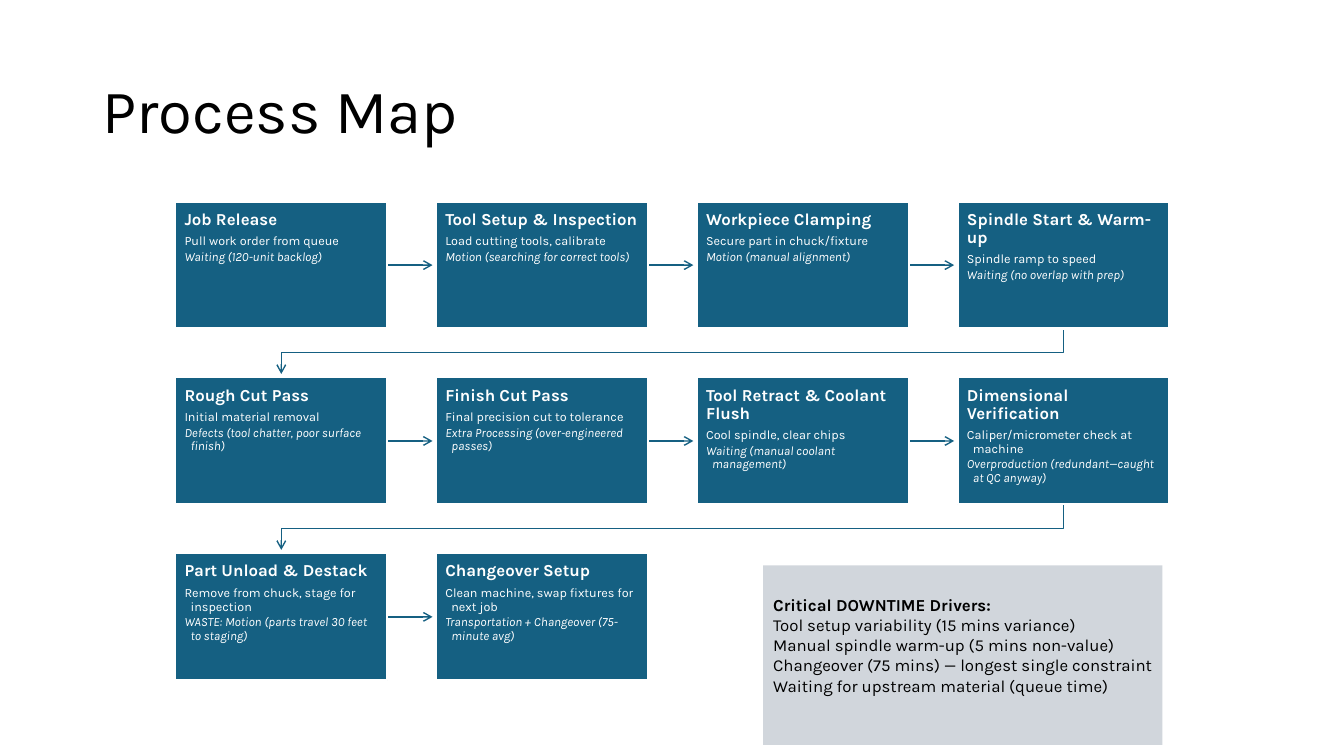
import pptx
import pptx.util
import pptx.dml.color
import pptx.enum.shapes
import pptx.enum.text
import pptx.oxml
import pptx.oxml.ns
from pptx.util import Inches

COLORS = {"blue": "156082", "white": "FFFFFF", "black": "000000", "grey": "D1D6DC"}
RGB = {name: pptx.dml.color.RGBColor.from_string(code) for name, code in COLORS.items()}
FONT = "Karla"


def add_text(frame, text, size=12, color="white", bold=False, italic=False,
             spacing=0.9, after=0, hanging=0):
    """Add one formatted paragraph, filling the empty first one if there is one."""
    paragraph = frame.paragraphs[0]
    if paragraph.runs:
        paragraph = frame.add_paragraph()
    paragraph.alignment = pptx.enum.text.PP_ALIGN.LEFT
    paragraph.line_spacing = spacing
    paragraph.space_after = pptx.util.Pt(after)
    if hanging:
        properties = paragraph._p.get_or_add_pPr()
        properties.set("marL", str(Inches(hanging)))
        properties.set("indent", str(-Inches(hanging)))
    run = paragraph.add_run()
    run.text = text
    run.font.name = FONT
    run.font.size = pptx.util.Pt(size)
    run.font.bold = bold
    run.font.italic = italic
    run.font.color.rgb = RGB[color]


def style_arrow(arrow):
    """Give a route its line, an open arrowhead at its end and no shadow."""
    arrow.line.color.rgb = RGB["blue"]
    arrow.line.width = pptx.util.Pt(1)
    head = pptx.oxml.parse_xml(
        f'<a:tailEnd {pptx.oxml.ns.nsdecls("a")} type="arrow"/>')
    arrow.line._get_or_add_ln().append(head)
    arrow._element.spPr.append(
        pptx.oxml.parse_xml(f'<a:effectLst {pptx.oxml.ns.nsdecls("a")}/>'))


presentation = pptx.Presentation()
presentation.slide_width = Inches(13.33)
presentation.slide_height = Inches(7.5)
slide = presentation.slides.add_slide(presentation.slide_layouts[6])
shapes = slide.shapes
RECTANGLE = pptx.enum.shapes.MSO_SHAPE.RECTANGLE
MIDDLE = pptx.enum.text.MSO_ANCHOR.MIDDLE

# Title
title = shapes.add_textbox(Inches(0.92), Inches(0.4), Inches(11.5), Inches(1.45)).text_frame
title.word_wrap = True
title.vertical_anchor = MIDDLE
add_text(title, "Process Map", size=44, color="black")

# Process steps: name, activity, waste
steps = [
    ("Job Release", "Pull work order from queue", "Waiting (120-unit backlog)"),
    ("Tool Setup & Inspection", "Load cutting tools, calibrate",
     "Motion (searching for correct tools)"),
    ("Workpiece Clamping", "Secure part in chuck/fixture", "Motion (manual alignment)"),
    ("Spindle Start & Warm-up", "Spindle ramp to speed", "Waiting (no overlap with prep)"),
    ("Rough Cut Pass", "Initial material removal",
     "Defects (tool chatter, poor surface finish)"),
    ("Finish Cut Pass", "Final precision cut to tolerance",
     "Extra Processing (over-engineered passes)"),
    ("Tool Retract & Coolant Flush", "Cool spindle, clear chips",
     "Waiting (manual coolant management)"),
    ("Dimensional Verification", "Caliper/micrometer check at machine",
     "Overproduction (redundant—caught at QC anyway)"),
    ("Part Unload & Destack", "Remove from chuck, stage for inspection",
     "WASTE: Motion (parts travel 30 feet to staging)"),
    ("Changeover Setup", "Clean machine, swap fixtures for next job",
     "Transportation + Changeover (75-minute avg)"),
]
COLUMNS = 4
LEFT, TOP = 1.74, 2
STEP_WIDTH, STEP_HEIGHT = 2.1, 1.26
COLUMN_PITCH = (9.5 - LEFT) / (COLUMNS - 1)
ROW_PITCH = (5.49 - TOP) / 2
ARROW_LENGTH = 0.45

for number, (name, activity, waste) in enumerate(steps):
    row, column = divmod(number, COLUMNS)
    x = LEFT + column * COLUMN_PITCH
    y = TOP + row * ROW_PITCH
    right, bottom = x + STEP_WIDTH, y + STEP_HEIGHT

    # Route to the next step, partly under the white box outline
    if number < len(steps) - 1:
        if column < COLUMNS - 1:
            middle = Inches(y + STEP_HEIGHT / 2)
            route = shapes.add_connector(
                pptx.enum.shapes.MSO_CONNECTOR.STRAIGHT,
                Inches(right), middle, Inches(right + ARROW_LENGTH), middle)
        else:
            start, end = Inches(x + STEP_WIDTH / 2), Inches(LEFT + STEP_WIDTH / 2)
            turn = Inches(bottom + 0.24)
            builder = shapes.build_freeform(start, Inches(bottom))
            builder.add_line_segments(
                [(start, turn), (end, turn), (end, Inches(bottom + ARROW_LENGTH))],
                close=False)
            route = builder.convert_to_shape()
            route.fill.background()
        style_arrow(route)

    # Step box
    step = shapes.add_shape(RECTANGLE, Inches(x), Inches(y),
                            Inches(STEP_WIDTH), Inches(STEP_HEIGHT))
    step.shadow.inherit = False
    step.fill.solid()
    step.fill.fore_color.rgb = RGB["blue"]
    step.line.color.rgb = RGB["white"]
    step.line.width = pptx.util.Pt(1.5)
    frame = step.text_frame
    frame.word_wrap = True
    frame.vertical_anchor = pptx.enum.text.MSO_ANCHOR.TOP
    frame.margin_left = frame.margin_right = Inches(0.09)
    frame.margin_top = frame.margin_bottom = Inches(0.09)
    add_text(frame, name, bold=True, after=4.2)
    add_text(frame, activity, size=9, after=1.35, hanging=0.06)
    add_text(frame, waste, size=9, italic=True, after=1.35, hanging=0.06)

# Downtime drivers
drivers = shapes.add_shape(RECTANGLE, Inches(7.57), Inches(5.61), Inches(3.96), Inches(1.78))
drivers.shadow.inherit = False
drivers.fill.solid()
drivers.fill.fore_color.rgb = RGB["grey"]
drivers.line.fill.background()
frame = drivers.text_frame
frame.word_wrap = True
frame.vertical_anchor = MIDDLE
frame.margin_right = Inches(0.05)
frame.margin_bottom = Inches(0.25)
add_text(frame, "Critical DOWNTIME Drivers:", color="black", bold=True, spacing=1.0)
for driver in [
    "Tool setup variability (15 mins variance)",
    "Manual spindle warm-up (5 mins non-value)",
    "Changeover (75 mins) — longest single constraint",
    "Waiting for upstream material (queue time)",
]:
    add_text(frame, driver, color="black", spacing=1.0)

presentation.save("out.pptx")
